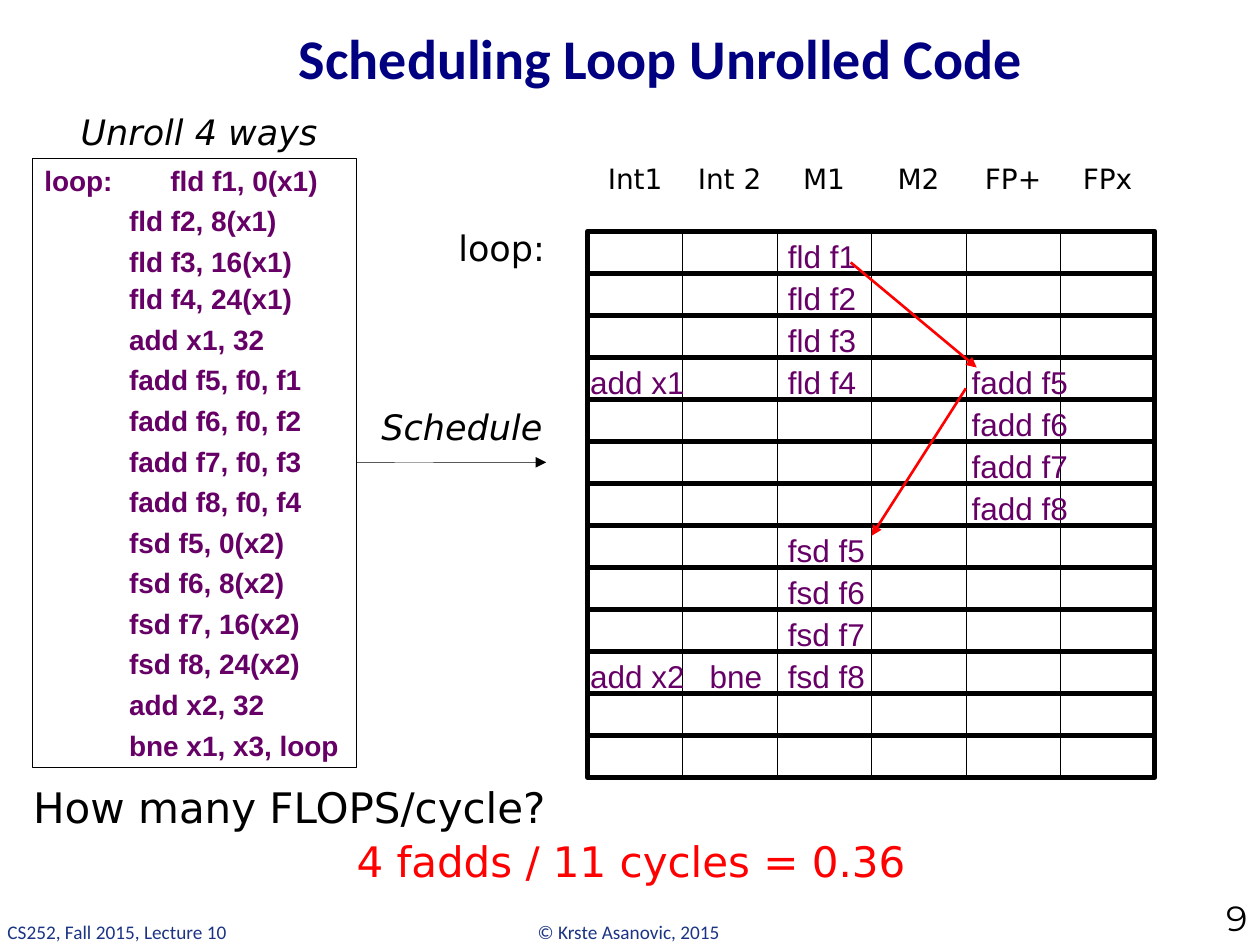
from dataclasses import dataclass
from typing import NamedTuple

from lxml import etree
from pptx import Presentation
from pptx import util as u
from pptx.dml.color import RGBColor
from pptx.enum import shapes, text
from pptx.oxml.ns import qn

COLORS = {"black": "000000", "navy": "000081", "footer": "1B3384",
          "code": "660066", "red": "FF0000"}
LEFT, CENTER, RIGHT = text.PP_ALIGN.LEFT, text.PP_ALIGN.CENTER, text.PP_ALIGN.RIGHT
TOP, MIDDLE, BOTTOM = (text.MSO_ANCHOR.TOP, text.MSO_ANCHOR.MIDDLE,
                       text.MSO_ANCHOR.BOTTOM)


class Box(NamedTuple):
    """Position and size in centimetres."""
    left: float
    top: float
    width: float
    height: float

    def lengths(self) -> list[u.Cm]:
        return [u.Cm(value) for value in self]


@dataclass
class Label:
    words: str
    box: Box
    size: int
    font: str = "DejaVu Sans"
    color: str = "black"
    align: text.PP_ALIGN = CENTER
    anchor: text.MSO_ANCHOR = MIDDLE
    italic: bool = False
    wrap: bool = False


class Op(NamedTuple):
    """An instruction placed in a cycle (row) of one functional unit."""
    cycle: int
    unit: str
    code: str


GRID = Box(11.85, 4.66, 11.43, 11.01)
UNITS = ["Int1", "Int 2", "M1", "M2", "FP+", "FPx"]
CYCLES = 13
CELL_W, CELL_H = GRID.width / len(UNITS), GRID.height / CYCLES

OP_LEFT = {"Int1": 11.63, "Int 2": 14.05, "M1": 15.62, "FP+": 19.33}
OP_WIDTH = {"fld": 1.9, "add": 2.44, "fadd": 2.46, "fsd": 2.08, "bne": 1.57}
OPS = [
    *(Op(i, "M1", f"fld f{i + 1}") for i in range(4)),
    Op(3, "Int1", "add x1"),
    *(Op(i + 3, "FP+", f"fadd f{i + 5}") for i in range(4)),
    *(Op(i + 7, "M1", f"fsd f{i + 5}") for i in range(4)),
    Op(10, "Int1", "add x2"),
    Op(10, "Int 2", "bne"),
]

CODE = ["loop:\tfld f1, 0(x1)", "fld f2, 8(x1)", "fld f3, 16(x1)", "fld f4, 24(x1)",
        "add x1, 32",
        "fadd f5, f0, f1", "fadd f6, f0, f2", "fadd f7, f0, f3", "fadd f8, f0, f4",
        "fsd f5, 0(x2)", "fsd f6, 8(x2)", "fsd f7, 16(x2)", "fsd f8, 24(x2)",
        "add x2, 32", "bne x1, x3, loop"]
CODE_INDENT = u.Cm(1.71)

LABELS = [
    Label("Unroll 4 ways", Box(1.34, 2.12, 5.35, 1.08), 20, italic=True),
    Label("Schedule", Box(7.41, 8.05, 3.81, 1.08), 20, italic=True, wrap=True),
    Label("loop:", Box(8.96, 4.45, 2.31, 1.08), 20),
    Label("How many FLOPS/cycle?", Box(0.42, 15.67, 20.53, 1.17), 24,
          align=LEFT, wrap=True),
    Label("4 fadds / 11 cycles = 0.36", Box(6.83, 16.72, 11.79, 1.26), 24,
          color="red", anchor=TOP),
    Label("CS252, Fall 2015, Lecture 10", Box(-0.1, 18.42, 4.98, 0.74), 11,
          "Calibri", "footer", LEFT, TOP),
    Label("© Krste Asanovic, 2015", Box(10.59, 18.42, 4.24, 0.74), 11,
          "Calibri", "footer", LEFT, TOP),
    Label("9", Box(23.06, 18.39, 2.34, 0.66), 20, "Montserrat",
          align=RIGHT, anchor=BOTTOM, wrap=True),
]


def rgb(name: str) -> RGBColor:
    return RGBColor.from_string(COLORS[name])


def style(font, name: str, size: int, color: str, bold=False, italic=False) -> None:
    font.name, font.size = name, u.Pt(size)
    font.bold, font.italic = bold, italic
    font.color.rgb = rgb(color)


def place(sp, box: Box) -> None:
    sp.left, sp.top, sp.width, sp.height = box.lengths()


def add_label(slide, label: Label) -> None:
    tf = slide.shapes.add_textbox(*label.box.lengths()).text_frame
    tf.word_wrap, tf.vertical_anchor = label.wrap, label.anchor
    p = tf.paragraphs[0]
    p.text, p.alignment = label.words, label.align
    style(p.font, label.font, label.size, label.color, italic=label.italic)


def add_frame(group, box: Box, weight: float) -> None:
    """Add an unfilled black rectangle."""
    sp = group.shapes.add_shape(shapes.MSO_SHAPE.RECTANGLE, *box.lengths())
    sp.shadow.inherit = False
    sp.fill.background()
    sp.line.color.rgb, sp.line.width = rgb("black"), u.Pt(weight)


def add_arrow(slide, start: tuple, end: tuple, color: str, weight: float):
    line = slide.shapes.add_connector(
        shapes.MSO_CONNECTOR.STRAIGHT, *(u.Cm(v) for v in start + end))
    line.line.color.rgb, line.line.width = rgb(color), u.Pt(weight)
    etree.SubElement(line.line._get_or_add_ln(), qn("a:tailEnd"), type="triangle")
    etree.SubElement(line._element.spPr, qn("a:effectLst"))
    return line


def add_title(slide) -> None:
    title = slide.shapes.title
    place(title, Box(3.38, 0.2, 19.89, 1.9))
    tf = title.text_frame
    tf.vertical_anchor = MIDDLE
    p = tf.paragraphs[0]
    p.text, p.alignment = "Scheduling Loop Unrolled Code", CENTER
    style(p.font, "Calibri", 32, "navy", bold=True)


def add_code(slide):
    body = slide.placeholders[1]
    place(body, Box(0.64, 3.18, 6.55, 12.29))
    body.line.color.rgb, body.line.width = rgb("black"), u.Pt(0.25)
    tf = body.text_frame
    tf.auto_size, tf.vertical_anchor = text.MSO_AUTO_SIZE.NONE, MIDDLE
    tf.text = "\n".join(CODE)
    for p in tf.paragraphs:
        labelled = "\t" in p.text
        p.space_before = u.Pt(4)
        style(p.font, "Arial", 16, "code", bold=True)
        pPr = p._p.get_or_add_pPr()
        pPr.set("marL", "0" if labelled else str(CODE_INDENT))
        pPr.set("indent", "0")
        bullet = etree.Element(qn("a:buNone"))
        pPr.find(qn("a:defRPr")).addprevious(bullet)
        if labelled:
            tabs = etree.Element(qn("a:tabLst"))
            etree.SubElement(tabs, qn("a:tab"), pos=str(CODE_INDENT), algn="l")
            bullet.addnext(tabs)
    tf.paragraphs[3].line_spacing = 0.9
    return body


def add_schedule(slide) -> None:
    for cycle in range(CYCLES):
        group = slide.shapes.add_group_shape()
        top = GRID.top + cycle * CELL_H
        for col in range(len(UNITS)):
            add_frame(group, Box(GRID.left + col * CELL_W, top, CELL_W, CELL_H), 0.25)
        add_frame(group, Box(GRID.left, top, GRID.width, CELL_H), 3)
    for col, unit in enumerate(UNITS):
        add_label(slide, Label(
            unit, Box(GRID.left + col * CELL_W, 3.18, CELL_W, CELL_H), 16, wrap=True))
    for op in OPS:
        box = Box(OP_LEFT[op.unit], GRID.top + op.cycle * CELL_H,
                  OP_WIDTH[op.code.split()[0]], 1.02)
        add_label(slide, Label(op.code, box, 18, "Arial", "code", anchor=TOP))


def main() -> None:
    prs = Presentation()
    prs.slide_width, prs.slide_height = u.Cm(25.4), u.Cm(19.05)
    slide = prs.slides.add_slide(prs.slide_layouts[1])
    add_title(slide)
    body = add_code(slide)
    add_schedule(slide)
    for label in LABELS:
        add_label(slide, label)
    add_arrow(slide, (7.19, 9.32), (11.01, 9.32), "black", 0.25).begin_connect(body, 3)
    add_arrow(slide, (17.15, 5.29), (19.69, 7.41), "red", 1.5)
    add_arrow(slide, (19.47, 7.83), (17.57, 10.8), "red", 1.5)
    prs.save("out.pptx")


if __name__ == "__main__":
    main()
